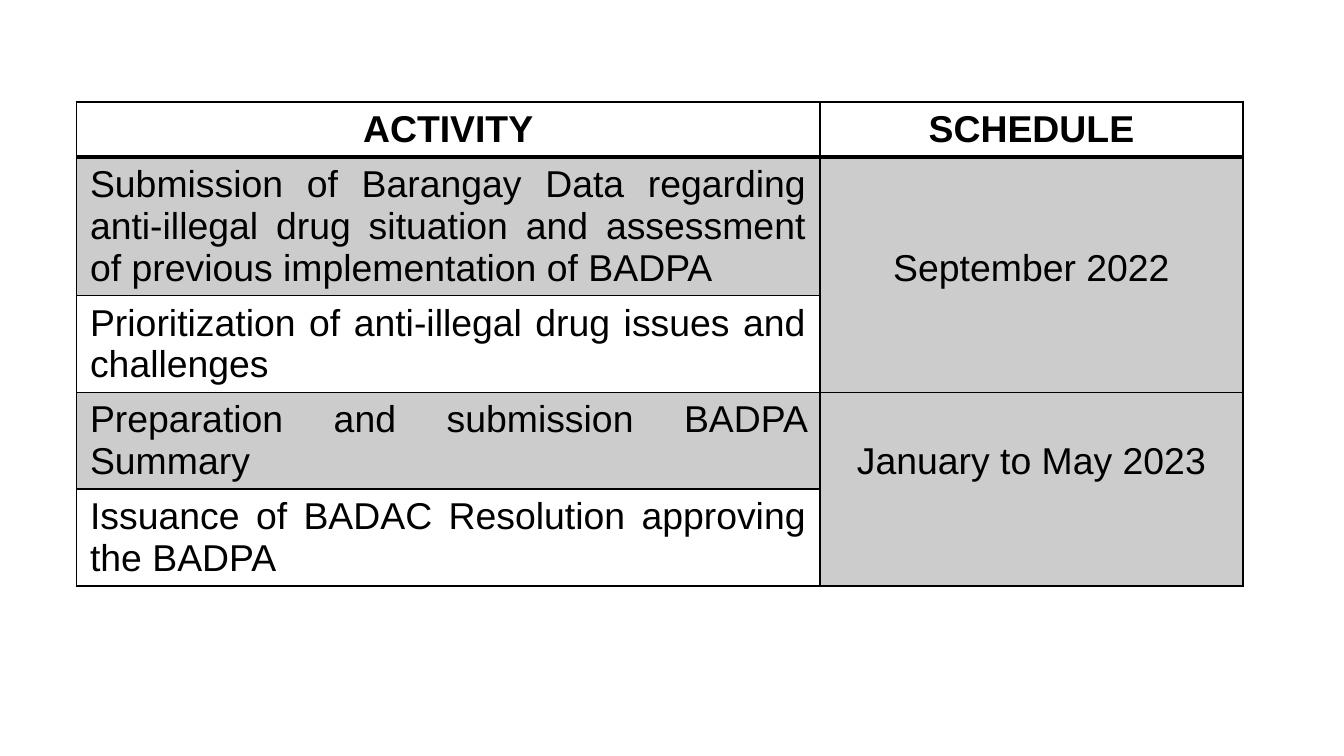
"""Build a slide with the schedule of BADPA activities."""
from lxml.etree import SubElement
from pptx import Presentation
from pptx.dml.color import RGBColor
from pptx.enum.text import PP_ALIGN
from pptx.oxml.ns import qn
from pptx.util import Inches, Pt

BLACK = RGBColor(0, 0, 0)
COL_WIDTHS = [5.53, 3.15]
ROW_HEIGHTS = [0.41, 1.03, 0.72, 0.72, 0.72]
LINE_HEIGHT = 0.31
MARGIN = 0.05
THIN, THICK = 1, 2.25
HEADERS = ["ACTIVITY", "SCHEDULE"]
ACTIVITIES = [
    "Submission of Barangay Data regarding anti-illegal drug situation and "
    "assessment of previous implementation of BADPA",
    "Prioritization of anti-illegal drug issues and challenges",
    "Preparation and submission BADPA Summary",
    "Issuance of BADAC Resolution approving the BADPA",
]
SCHEDULES = [("September 2022", 2), ("January to May 2023", 1)]


def write(tf, text, align=PP_ALIGN.CENTER, size=20, bold=False, color=BLACK, font="Arial"):
    p = tf.paragraphs[0]
    p.alignment = align
    r = p.add_run()
    r.text = text
    r.font.name, r.font.size, r.font.bold = font, Pt(size), bold
    r.font.color.rgb = color


class ScheduleSlide:
    def __init__(self, prs, line=BLACK, shade=BLACK, opacity=20):
        self.line, self.shade, self.opacity = line, shade, opacity
        self.slide = prs.slides.add_slide(prs.slide_layouts[6])

    def table(self, left, top, widths, heights):
        frame = self.slide.shapes.add_table(
            len(heights), len(widths), Inches(left), Inches(top),
            Inches(sum(widths)), Inches(sum(heights)))
        table = frame.table
        table.first_row = table.horz_banding = False
        for column, width in zip(table.columns, widths):
            column.width = Inches(width)
        for row, height in zip(table.rows, heights):
            row.height = Inches(height)
        for i, row in enumerate(table.rows):
            for cell in row.cells:
                self.borders(cell, top=THICK if i == 1 else THIN,
                             bottom=THICK if i == 0 else THIN)
                cell.fill.background()
        return table

    def borders(self, cell, top=THIN, bottom=THIN):
        tc_pr = cell._tc.get_or_add_tcPr()
        for side, width in zip("LRTB", (THIN, THIN, top, bottom)):
            ln = SubElement(tc_pr, qn(f"a:ln{side}"), w=str(Pt(width)))
            fill = SubElement(ln, qn("a:solidFill"))
            SubElement(fill, qn("a:srgbClr"), val=str(self.line))

    def shading(self, cell):
        cell.fill.solid()
        cell.fill.fore_color.rgb = self.shade
        color = cell._tc.tcPr.find(qn("a:solidFill")).find(qn("a:srgbClr"))
        SubElement(color, qn("a:alpha"), val=str(self.opacity * 1000))

    def cell(self, cell, text, shaded=False, lines_above=0, **style):
        cell.margin_top = Inches(MARGIN + lines_above * LINE_HEIGHT)
        write(cell.text_frame, text, **style)
        if shaded:
            self.shading(cell)


def main():
    prs = Presentation()
    prs.slide_width = Inches(10)
    prs.slide_height = prs.slide_width * 9 // 16
    s = ScheduleSlide(prs)
    table = s.table(0.57, 0.76, COL_WIDTHS, ROW_HEIGHTS)
    for col, header in enumerate(HEADERS):
        s.cell(table.cell(0, col), header, bold=True)
    for row, activity in enumerate(ACTIVITIES, 1):
        s.cell(table.cell(row, 0), activity, shaded=row % 2 == 1, align=PP_ALIGN.JUSTIFY)
    for i, (schedule, lines_above) in enumerate(SCHEDULES):
        row = 1 + 2 * i
        table.cell(row, 1).merge(table.cell(row + 1, 1))
        s.cell(table.cell(row, 1), schedule, shaded=True, lines_above=lines_above)
    prs.save("out.pptx")


if __name__ == "__main__":
    main()
